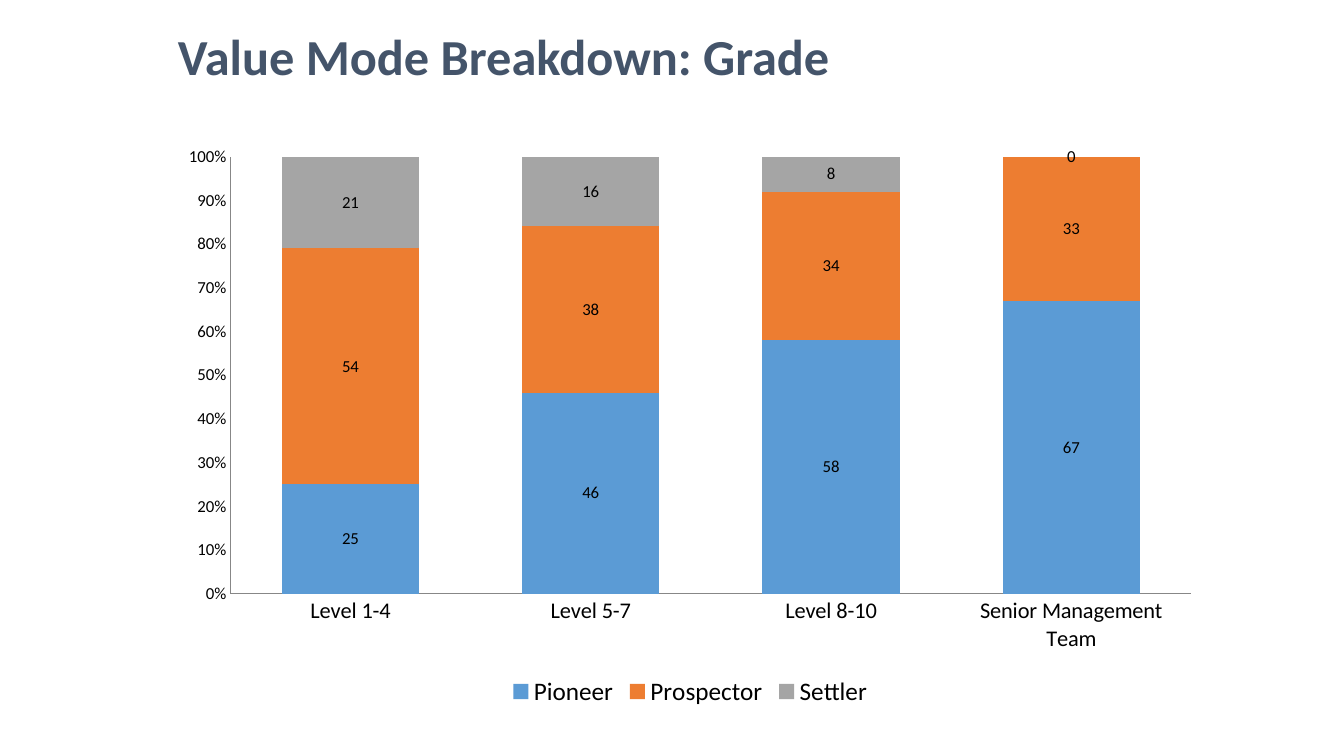
from dataclasses import dataclass

from pptx import Presentation
from pptx.chart.data import CategoryChartData
from pptx.dml.color import RGBColor
from pptx.enum.chart import XL_CHART_TYPE, XL_LEGEND_POSITION, XL_TICK_MARK
from pptx.enum.text import MSO_ANCHOR
from pptx.util import Pt

STACKED = XL_CHART_TYPE.COLUMN_STACKED_100
BOTTOM = XL_LEGEND_POSITION.BOTTOM
NO_TICK = XL_TICK_MARK.NONE
MIDDLE = MSO_ANCHOR.MIDDLE


@dataclass(frozen=True)
class Theme:
    font: str = "Calibri"
    title: str = "44546A"
    text: str = "000000"
    axis: str = "878787"
    series: tuple = ("5B9BD5", "ED7D31", "A5A5A5")
    title_size: int = 36
    legend_size: int = 18
    category_size: int = 16
    label_size: int = 12


THEME = Theme()
GRADES = ("Level 1-4", "Level 5-7", "Level 8-10", "Senior Management Team")
VALUE_MODES = {
    "Pioneer": (25, 46, 58, 67),
    "Prospector": (54, 38, 34, 33),
    "Settler": (21, 16, 8, 0),
}


def set_font(font, size, color, bold=False):
    font.name = THEME.font
    font.size = Pt(size)
    font.bold = bold
    font.color.rgb = RGBColor.from_string(color)


def add_title(s, text, x, y, w, h):
    tf = s.shapes.add_textbox(Pt(x), Pt(y), Pt(w), Pt(h)).text_frame
    tf.word_wrap = True
    tf.vertical_anchor = MIDDLE
    p = tf.paragraphs[0]
    p.line_spacing = 0.95
    r = p.add_run()
    r.text = text
    set_font(r.font, THEME.title_size, THEME.title, bold=True)


def style_axis(axis, size):
    axis.has_major_gridlines = False
    axis.major_tick_mark = axis.minor_tick_mark = NO_TICK
    axis.format.line.color.rgb = RGBColor.from_string(THEME.axis)
    axis.format.line.width = Pt(0.75)
    set_font(axis.tick_labels.font, size, THEME.text)


def add_breakdown_chart(s, x, y, w, h):
    data = CategoryChartData(number_format="General")
    data.categories = GRADES
    for name, values in VALUE_MODES.items():
        data.add_series(name, values)
    chart = s.shapes.add_chart(STACKED, Pt(x), Pt(y), Pt(w), Pt(h), data).chart
    chart.has_title = False
    set_font(chart.font, THEME.label_size, THEME.text)

    style_axis(chart.category_axis, THEME.category_size)
    style_axis(chart.value_axis, THEME.label_size)
    chart.value_axis.tick_labels.number_format = "0%"
    chart.value_axis.tick_labels.number_format_is_linked = False

    chart.has_legend = True
    chart.legend.position = BOTTOM
    chart.legend.include_in_layout = False
    set_font(chart.legend.font, THEME.legend_size, THEME.text)

    plot = chart.plots[0]
    plot.gap_width = 75
    plot.overlap = 100
    plot.vary_by_categories = False
    for series, color in zip(plot.series, THEME.series):
        series.format.fill.solid()
        series.format.fill.fore_color.rgb = RGBColor.from_string(color)
        labels = series.data_labels
        labels.show_value = True
        set_font(labels.font, THEME.label_size, THEME.text)


def main():
    prs = Presentation()
    prs.slide_width, prs.slide_height = Pt(960), Pt(540)
    s = prs.slides.add_slide(prs.slide_layouts[6])
    add_title(s, "Value Mode Breakdown: Grade", 120, 16, 612, 51)
    add_breakdown_chart(s, 120, 96.5, 746, 412)
    prs.save("out.pptx")


if __name__ == "__main__":
    main()
